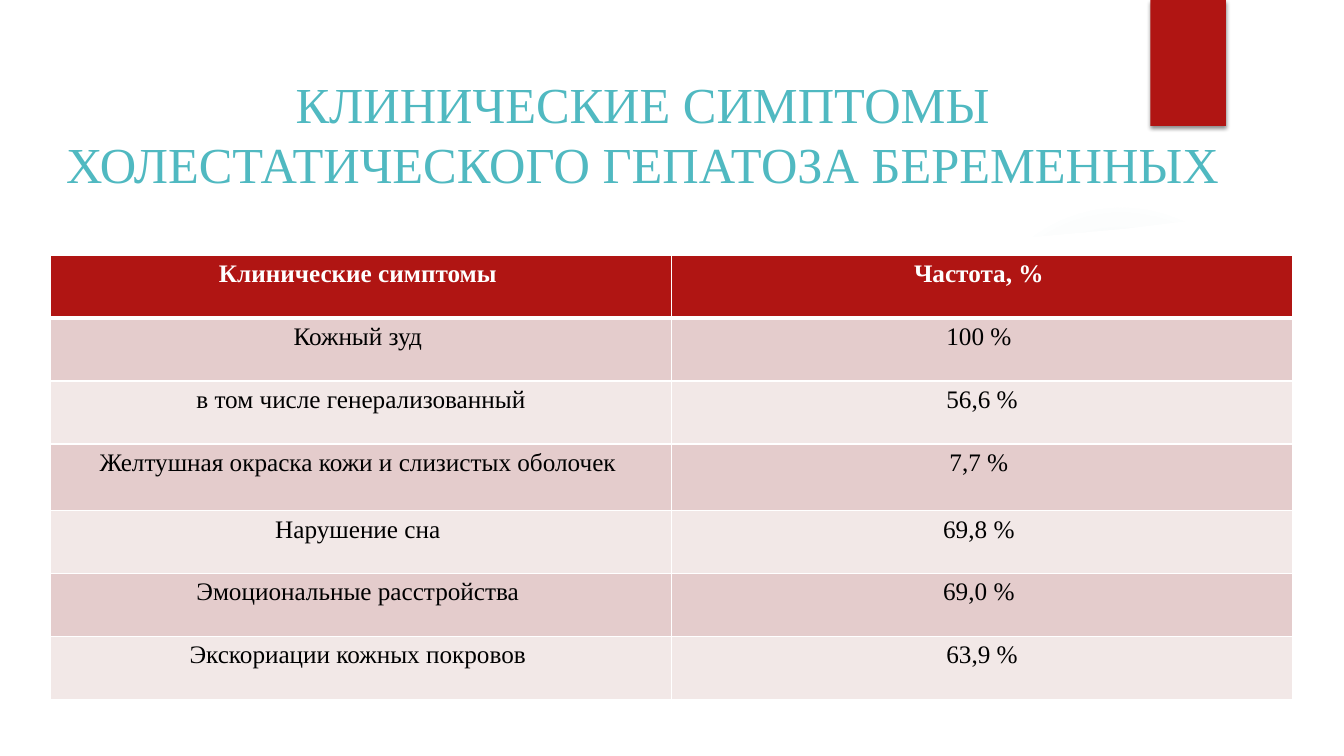
from lxml.etree import SubElement
from pptx import Presentation
from pptx.dml.color import RGBColor
from pptx.enum.shapes import MSO_SHAPE as Shape
from pptx.enum.text import MSO_ANCHOR as Anchor, PP_ALIGN as Align
from pptx.oxml import parse_xml
from pptx.oxml.ns import nsdecls, qn
from pptx.util import Inches, Pt

FONT = "Times New Roman"
RED, WHITE = "B01513", "FFFFFF"


def paint(color_format, color):
    color_format.rgb = RGBColor.from_string(color)


def add_border(cell, side, width):
    line = SubElement(cell._tc.get_or_add_tcPr(), qn(f"a:{side}"), w=str(Pt(width)))
    fill = SubElement(line, qn("a:solidFill"))
    SubElement(fill, qn("a:srgbClr"), val=WHITE)


prs = Presentation()
prs.slide_width, prs.slide_height = Inches(13.33), Inches(7.5)
slide = prs.slides.add_slide(prs.slide_layouts[6])
shapes = slide.shapes

# Faint round glow that rises above the white panel
glow = shapes.add_shape(Shape.OVAL, Inches(9.58), Inches(2), Inches(3.08), Inches(3.08))
glow.shadow.inherit = False
glow.line.fill.background()
stops = "".join(
    f'<a:gs pos="{place * 1000}"><a:srgbClr val="5F9C9D">'
    f'<a:alpha val="{alpha * 1000}"/></a:srgbClr></a:gs>'
    for place, alpha in ((0, 7), (36, 6), (69, 0)))
glow._element.spPr.find(qn("a:prstGeom")).addnext(parse_xml(
    f'<a:gradFill {nsdecls("a")}><a:gsLst>{stops}</a:gsLst><a:path path="circle">'
    '<a:fillToRect l="50000" t="50000" r="50000" b="50000"/></a:path></a:gradFill>'))

# White panel with a sagging top edge
panel_edge = [(0.5, 2.04), (0.5, 7), (12.84, 7), (12.84, 2.04), (12.28, 2.13),
              (11.72, 2.2), (11.16, 2.27), (10.6, 2.32), (10.04, 2.37), (9.49, 2.41),
              (8.94, 2.44), (8.4, 2.46), (7.86, 2.47), (7.08, 2.48), (6.32, 2.47),
              (5.59, 2.46), (4.88, 2.43), (4.01, 2.38), (3.21, 2.33), (2.49, 2.27),
              (1.87, 2.21), (1.35, 2.15), (0.94, 2.1)]
corners = [(Inches(x), Inches(y)) for x, y in panel_edge]
outline = shapes.build_freeform(*corners[0], scale=1.0)
outline.add_line_segments(corners[1:])
panel = outline.convert_to_shape()
panel.shadow.inherit = False
panel.fill.solid()
paint(panel.fill.fore_color, WHITE)
panel.line.fill.background()

# Red ribbon with a soft shadow
ribbon = shapes.add_shape(Shape.RECTANGLE, Inches(11.41), 0, Inches(0.75), Inches(1.25))
ribbon.fill.solid()
paint(ribbon.fill.fore_color, RED)
ribbon.line.fill.background()
ribbon._element.spPr.append(parse_xml(
    f'<a:effectLst {nsdecls("a")}><a:outerShdw blurRad="{Pt(3)}" dist="{Pt(2)}" '
    'dir="5400000" rotWithShape="0"><a:srgbClr val="000000"><a:alpha val="45000"/>'
    '</a:srgbClr></a:outerShdw></a:effectLst>'))

# Title
title = shapes.add_textbox(Inches(0.5), Inches(0.57), Inches(11.75), Inches(1.51))
title.text_frame.word_wrap = True
title.text_frame.vertical_anchor = Anchor.MIDDLE
heading = title.text_frame.paragraphs[0]
heading.text = "КЛИНИЧЕСКИЕ СИМПТОМЫ ХОЛЕСТАТИЧЕСКОГО ГЕПАТОЗА БЕРЕМЕННЫХ"
heading.alignment = Align.CENTER
heading.font.name, heading.font.size = FONT, Pt(36)
paint(heading.font.color, "50B9C1")

# Symptom table
symptoms = [
    ("Клинические симптомы ", "Частота, % "),
    ("Кожный зуд ", "100 % "),
    ("в том числе генерализованный", "56,6 %"),
    ("Желтушная окраска кожи и слизистых оболочек ", "7,7 % "),
    ("Нарушение сна ", "69,8 % "),
    ("Эмоциональные расстройства ", "69,0 % "),
    ("Экскориации кожных покровов ", "63,9 %"),
]
table = shapes.add_table(len(symptoms), 2, Inches(0.5), Inches(2.53),
                         Inches(12.32), Inches(4.41)).table
for r, row in enumerate(symptoms):
    table.rows[r].height = Inches(0.66 if r == 3 else 5 / 8)
    header = r == 0
    band = RED if header else ("F2E8E7", "E4CCCC")[r % 2]
    for c, text in enumerate(row):
        cell = table.cell(r, c)
        entry = cell.text_frame.paragraphs[0]
        entry.text = text
        entry.alignment = Align.CENTER
        entry.font.name, entry.font.size, entry.font.bold = FONT, Pt(18), header
        paint(entry.font.color, WHITE if header else "000000")
        for side in ("lnL", "lnR", "lnT", "lnB"):
            beside_header = (r, side) in ((0, "lnB"), (1, "lnT"))
            add_border(cell, side, 3 if beside_header else 1)
        cell.fill.solid()
        paint(cell.fill.fore_color, band)

prs.save("out.pptx")
